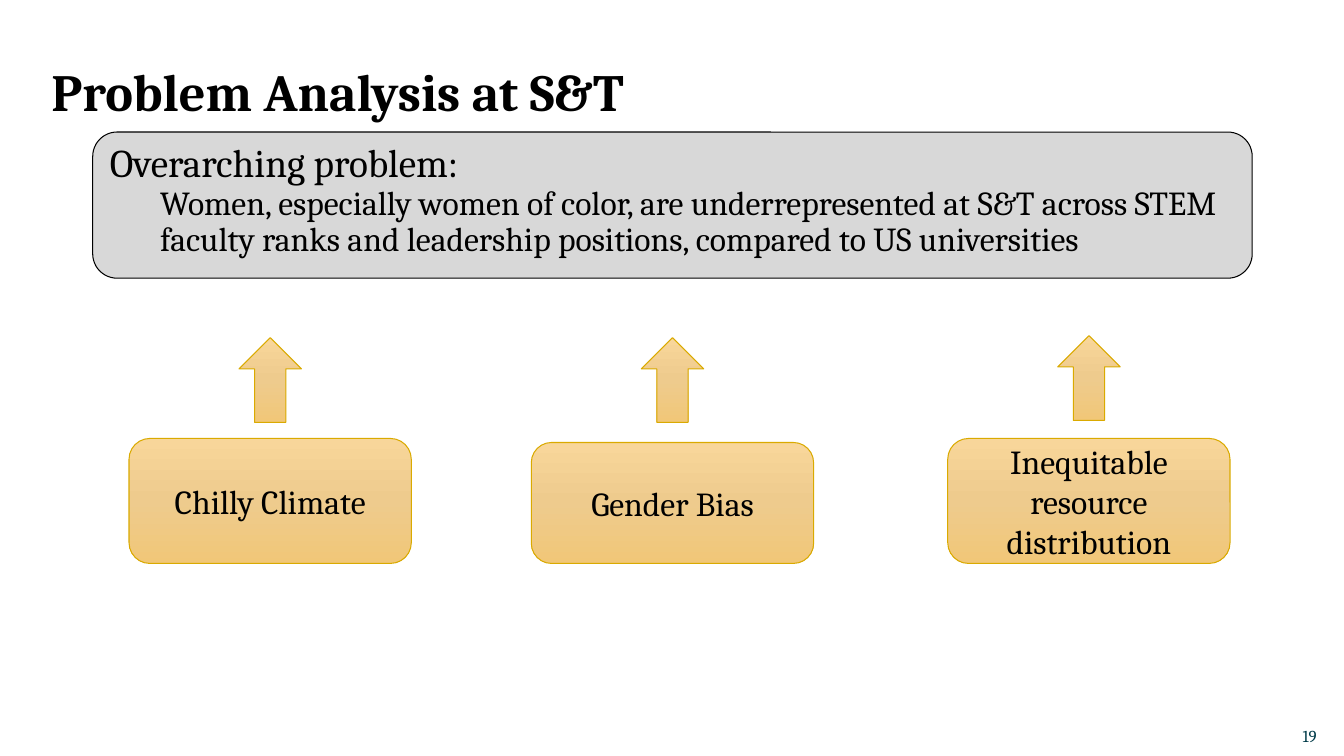
import copy
import dataclasses

import pptx
import pptx.dml.color
import pptx.enum.shapes
import pptx.enum.text
import pptx.util

Inches = pptx.util.Inches
Shapes = pptx.enum.shapes.MSO_SHAPE
Anchor = pptx.enum.text.MSO_ANCHOR
Align = pptx.enum.text.PP_ALIGN


@dataclasses.dataclass(frozen=True)
class Theme:
    font: str = "Cambria"
    ink: str = "000000"
    page_ink: str = "003B49"
    panel: str = "D8D8D8"
    gold_line: str = "DAAA00"
    gold_stops: tuple = ((0, "F8D69A"), (0.5, "EECB8D"), (1, "F1C778"))
    title_size: float = 37.3
    heading_size: float = 28
    body_size: float = 24
    page_size: float = 12
    line_width: float = 0.75


def rgb(value):
    return pptx.dml.color.RGBColor.from_string(value)


def apply(target, formats):
    for name, value in formats.items():
        setattr(target, name, value)


class SlideBuilder:
    def __init__(self, slide, theme):
        self.slide = slide
        self.theme = theme

    def fill_text(self, box, paragraphs, color=None, inset=0.1, **frame_formats):
        """Fill a box with (text, size, font formats, paragraph formats) entries."""
        frame = box.text_frame
        apply(frame, {
            "word_wrap": True,
            "margin_left": Inches(inset), "margin_right": Inches(inset),
            "margin_top": Inches(0.05), "margin_bottom": Inches(0.05),
            **frame_formats,
        })
        for index, (text, size, font_formats, para_formats) in enumerate(paragraphs):
            para = frame.add_paragraph() if index else frame.paragraphs[0]
            apply(para, {"alignment": Align.LEFT, **para_formats})
            span = para.add_run()
            span.text = text
            apply(span.font, {"name": self.theme.font, "size": pptx.util.Pt(size), **font_formats})
            span.font.color.rgb = rgb(color or self.theme.ink)

    def text(self, bounds, paragraphs, **formats):
        box = self.slide.shapes.add_textbox(*map(Inches, bounds))
        self.fill_text(box, paragraphs, **formats)

    def shape(self, kind, bounds, line_color):
        shape = self.slide.shapes.add_shape(kind, *map(Inches, bounds))
        shape.shadow.inherit = False
        shape.line.color.rgb = rgb(line_color)
        shape.line.width = pptx.util.Pt(self.theme.line_width)
        return shape

    def gold_shape(self, kind, bounds):
        shape = self.shape(kind, bounds, self.theme.gold_line)
        shape.fill.gradient()
        shape.fill.gradient_angle = 270
        stop_list = shape.element.xpath(".//a:gsLst")[0]
        stop_list.append(copy.deepcopy(stop_list[0]))
        for stop, (position, color) in zip(shape.fill.gradient_stops, self.theme.gold_stops):
            stop.position = position
            stop.color.rgb = rgb(color)
        return shape

    def panel(self, bounds, paragraphs):
        panel = self.shape(Shapes.ROUNDED_RECTANGLE, bounds, self.theme.ink)
        panel.fill.solid()
        panel.fill.fore_color.rgb = rgb(self.theme.panel)
        self.fill_text(panel, paragraphs, vertical_anchor=Anchor.TOP)

    def cause(self, label, left, top, arrow_top):
        """Draw a cause box ending on the shared baseline, with an arrow centred above it."""
        width, bottom, arrow_width = 2.8, 5.59, 0.62
        box = self.gold_shape(Shapes.ROUNDED_RECTANGLE, (left, top, width, bottom - top))
        self.fill_text(box, [(label, self.theme.body_size, {}, {"alignment": Align.CENTER})],
                       vertical_anchor=Anchor.MIDDLE)
        arrow_left = left + (width - arrow_width) / 2
        self.gold_shape(Shapes.UP_ARROW, (arrow_left, arrow_top, arrow_width, 0.84))


def main():
    deck = pptx.Presentation()
    deck.slide_width, deck.slide_height = Inches(13.33), Inches(7.5)
    theme = Theme()
    page = SlideBuilder(deck.slides.add_slide(deck.slide_layouts[6]), theme)
    tight = {"line_spacing": 0.9}

    page.text((12.82, 7.15, 0.68, 0.3), [("19", theme.page_size, {}, {})], color=theme.page_ink)
    page.text((0.51, 0.44, 10.97, 0.83),
              [("Problem Analysis at S&T", theme.title_size, {"bold": True}, tight)],
              inset=0, vertical_anchor=Anchor.BOTTOM)
    for label, left, top, arrow_top in (
        ("Chilly Climate", 1.28, 4.35, 3.35),
        ("Gender Bias", 5.27, 4.39, 3.35),
        ("Inequitable resource distribution", 9.4, 4.35, 3.33),
    ):
        page.cause(label, left, top, arrow_top)
    page.panel((0.92, 1.31, 11.5, 1.45), [
        ("Overarching problem:", theme.heading_size, {}, tight),
        ("Women, especially women of color, are underrepresented at S&T across STEM "
         "faculty ranks and leadership positions, compared to US universities",
         theme.body_size, {}, {**tight, "level": 1}),
    ])
    deck.save("out.pptx")


if __name__ == "__main__":
    main()
